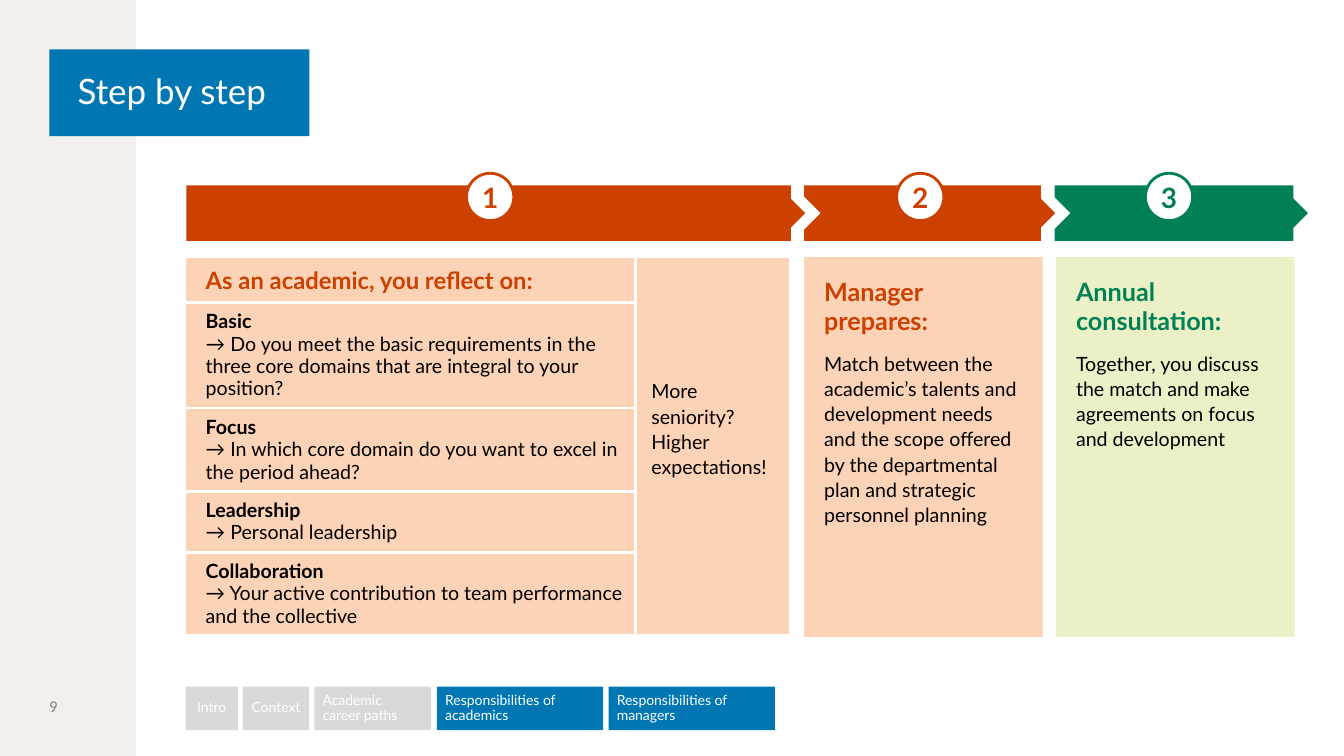
from typing import NamedTuple

from lxml import etree
from pptx import Presentation
from pptx.dml.color import RGBColor
from pptx.enum.shapes import MSO_SHAPE
from pptx.enum.text import MSO_ANCHOR, PP_ALIGN
from pptx.oxml.ns import qn
from pptx.util import Pt

RECTANGLE, OVAL = MSO_SHAPE.RECTANGLE, MSO_SHAPE.OVAL
TOP, MIDDLE = MSO_ANCHOR.TOP, MSO_ANCHOR.MIDDLE
LEFT, CENTER = PP_ALIGN.LEFT, PP_ALIGN.CENTER

WHITE = RGBColor(0xFF, 0xFF, 0xFF)
BLACK = RGBColor(0x00, 0x00, 0x00)
SAND = RGBColor(0xF2, 0xEF, 0xED)
BLUE = RGBColor(0x00, 0x77, 0xB3)
ORANGE = RGBColor(0xCC, 0x41, 0x00)
GREEN = RGBColor(0x00, 0x80, 0x53)
PEACH = RGBColor(0xFC, 0xD3, 0xB6)
LIME = RGBColor(0xEB, 0xF0, 0xC6)
LIGHT_GREY = RGBColor(0xD9, 0xD9, 0xD9)
GREY = RGBColor(0x7F, 0x7F, 0x7F)

FONT = "Lato"
NO_GRID_STYLE = "{2D5ABB26-0587-4C30-8999-92F81FD0307C}"
BAR_TOP, BAR_HEIGHT = 132.5, 39.6
BADGE_TOP, BADGE_SIZE = 123.8, 33.8
TIP_SIZE, TIP_INSET, TIP_GAP = 18.7, 2.9, 10.8
PANEL_TOP, PANEL_WIDTH, PANEL_HEIGHT = 183.6, 170.6, 271.4
ROW_LINE, ROW_PADDING = 16, 5.75


class Stage(NamedTuple):
    left: float
    width: float
    badge_left: float
    color: RGBColor


class Panel(NamedTuple):
    left: float
    fill: RGBColor
    color: RGBColor
    heading: str
    body: str


class Topic(NamedTuple):
    name: str
    question: str
    lines: int


class Tab(NamedTuple):
    left: float
    width: float
    fill: RGBColor
    align: PP_ALIGN
    label: str


STAGES = [
    Stage(133.2, 432, 333.4, ORANGE),
    Stage(574.6, 169.2, 640.8, ORANGE),
    Stage(753.8, 170.6, 818.6, GREEN),
]
PANELS = [
    Panel(574.6, PEACH, ORANGE, "Manager\vprepares:",
          "Match between the academic’s talents and development needs and the scope "
          "offered by the departmental plan and strategic personnel planning"),
    Panel(754.6, LIME, GREEN, "Annual consultation:",
          "Together, you discuss the match and make agreements on focus and development"),
]
TOPICS = [
    Topic("Basic", "→ Do you meet the basic requirements in the three core domains "
          "that are integral to your position?", 4),
    Topic("Focus", "→ In which core domain do you want to excel in the period ahead?", 3),
    Topic("Leadership", "→ Personal leadership", 2),
    Topic("Collaboration", "→ Your active contribution to team performance and the collective", 3),
]
SENIORITY_LINES = ["More", "seniority?", "Higher", "expectations!"]
TABS = [
    Tab(132.6, 37.4, LIGHT_GREY, CENTER, "Intro"),
    Tab(173.5, 47.5, LIGHT_GREY, CENTER, "Context"),
    Tab(224.7, 83.5, LIGHT_GREY, LEFT, "Academic career paths"),
    Tab(312.3, 118.8, BLUE, LEFT, "Responsibilities of academics"),
    Tab(435, 118.8, BLUE, LEFT, "Responsibilities of managers"),
]


def write(frame, text: str, *, size: float, color: RGBColor = BLACK, bold: bool = False,
          align: PP_ALIGN = LEFT, spacing=1.0, after: float = 0) -> None:
    paragraph = frame.paragraphs[0]
    if paragraph.runs:
        paragraph = frame.add_paragraph()
    paragraph.text = text
    paragraph.alignment = align
    paragraph.line_spacing = spacing
    paragraph.space_after = Pt(after)
    for run in paragraph.runs:
        run.font.name = FONT
        run.font.size = Pt(size)
        run.font.bold = bold
        run.font.color.rgb = color


def set_frame(frame, margins: tuple, anchor: MSO_ANCHOR, wrap: bool = True) -> None:
    frame.margin_left, frame.margin_top, frame.margin_right, frame.margin_bottom = map(Pt, margins)
    frame.vertical_anchor = anchor
    frame.word_wrap = wrap


def add_box(slide, left: float, top: float, width: float, height: float,
            fill: RGBColor, kind: MSO_SHAPE = RECTANGLE):
    shape = slide.shapes.add_shape(kind, Pt(left), Pt(top), Pt(width), Pt(height))
    shape.shadow.inherit = False
    shape.fill.solid()
    shape.fill.fore_color.rgb = fill
    shape.line.fill.background()
    return shape


def add_tip(slide, center: float, color: RGBColor) -> None:
    top = BAR_TOP + (BAR_HEIGHT - TIP_SIZE) / 2
    tip = add_box(slide, center - TIP_SIZE / 2, top, TIP_SIZE, TIP_SIZE, color)
    tip.rotation = 45


def add_stages(slide) -> None:
    for stage in STAGES:
        add_box(slide, stage.left, BAR_TOP, stage.width, BAR_HEIGHT, stage.color)
    for number, stage in enumerate(STAGES, 1):
        center = stage.left + stage.width - TIP_INSET
        if number < len(STAGES):
            add_tip(slide, center + TIP_GAP, WHITE)
        add_tip(slide, center, stage.color)
        badge = add_box(slide, stage.badge_left, BADGE_TOP, BADGE_SIZE, BADGE_SIZE, WHITE, OVAL)
        badge.line.color.rgb = stage.color
        badge.line.width = Pt(2)
        set_frame(badge.text_frame, (0, 0, 0, 0), MIDDLE)
        write(badge.text_frame, str(number), size=20, color=stage.color, bold=True, align=CENTER)


def add_panel(slide, panel: Panel) -> None:
    box = add_box(slide, panel.left, PANEL_TOP, PANEL_WIDTH, PANEL_HEIGHT, panel.fill)
    frame = box.text_frame
    set_frame(frame, (14.4, 14.4, 11.5, 0), TOP)
    write(frame, panel.heading, size=18, color=panel.color, bold=True, spacing=Pt(21), after=10)
    write(frame, panel.body, size=14, spacing=Pt(18))


def style_cell(cell, sides: str, margins: tuple, anchor: MSO_ANCHOR = MIDDLE) -> None:
    properties = cell._tc.get_or_add_tcPr()
    for side in sides:
        line = etree.SubElement(properties, qn(f"a:ln{side}"), w=str(Pt(2.25)))
        fill = etree.SubElement(line, qn("a:solidFill"))
        etree.SubElement(fill, qn("a:srgbClr"), val=str(WHITE))
    cell.fill.solid()
    cell.fill.fore_color.rgb = PEACH
    cell.margin_left, cell.margin_top, cell.margin_right, cell.margin_bottom = map(Pt, margins)
    cell.vertical_anchor = anchor


def add_reflection_table(slide) -> None:
    heights = [32.4] + [topic.lines * ROW_LINE + 2 * ROW_PADDING for topic in TOPICS]
    graphic = slide.shapes.add_table(len(heights), 2, Pt(132.6), Pt(PANEL_TOP),
                                     Pt(432.4), Pt(sum(heights)))
    table = graphic.table
    table.first_row = table.horz_banding = False
    table._tbl.tblPr.find(qn("a:tableStyleId")).text = NO_GRID_STYLE
    table.columns[0].width, table.columns[1].width = Pt(321.4), Pt(111)
    for row, height in zip(table.rows, heights):
        row.height = Pt(height)

    heading = table.cell(0, 0)
    style_cell(heading, "RTB", (14.4, 8.6, 8.6, 5.8))
    write(heading.text_frame, "As an academic, you reflect on:", size=17, color=ORANGE,
          bold=True, spacing=Pt(18))
    style_cell(table.cell(0, 1), "LRT", (0, 0, 0, 0))

    for index, topic in enumerate(TOPICS, 1):
        cell = table.cell(index, 0)
        style_cell(cell, "RTB", (14.4, ROW_PADDING, 2.9, ROW_PADDING))
        write(cell.text_frame, topic.name, size=14, bold=True, spacing=Pt(ROW_LINE))
        write(cell.text_frame, topic.question, size=14, spacing=Pt(ROW_LINE))

    seniority = table.cell(1, 1)
    seniority.merge(table.cell(len(TOPICS), 1))
    style_cell(seniority, "LRB", (11.5, 54, 2.9, 11.5), TOP)
    for line in SENIORITY_LINES:
        write(seniority.text_frame, line, size=14, spacing=Pt(18))


def add_tab(slide, tab: Tab) -> None:
    box = add_box(slide, tab.left, 490.5, tab.width, 31, tab.fill)
    set_frame(box.text_frame, (5.8, 5.8, 5.8, 5.8), MIDDLE)
    write(box.text_frame, tab.label, size=10, color=WHITE, align=tab.align, spacing=0.9)


def main() -> None:
    presentation = Presentation()
    presentation.slide_width, presentation.slide_height = Pt(960.5), Pt(540)
    slide = presentation.slides.add_slide(presentation.slide_layouts[6])

    add_box(slide, 0, 0, 97.2, 540, SAND)
    title = add_box(slide, 35.3, 35.3, 185.8, 61.9, BLUE)
    set_frame(title.text_frame, (20.2, 17.3, 17.3, 17.3), MIDDLE, wrap=False)
    write(title.text_frame, "Step by step", size=25, color=WHITE, spacing=0.9)
    page = slide.shapes.add_textbox(Pt(35.3), Pt(469.4), Pt(61.9), Pt(70.6))
    set_frame(page.text_frame, (0, 0, 0, 0), MIDDLE)
    write(page.text_frame, "9", size=10.5, color=GREY)

    for panel in PANELS:
        add_panel(slide, panel)
    add_reflection_table(slide)
    add_stages(slide)
    for tab in TABS:
        add_tab(slide, tab)
    presentation.save("out.pptx")


if __name__ == "__main__":
    main()
